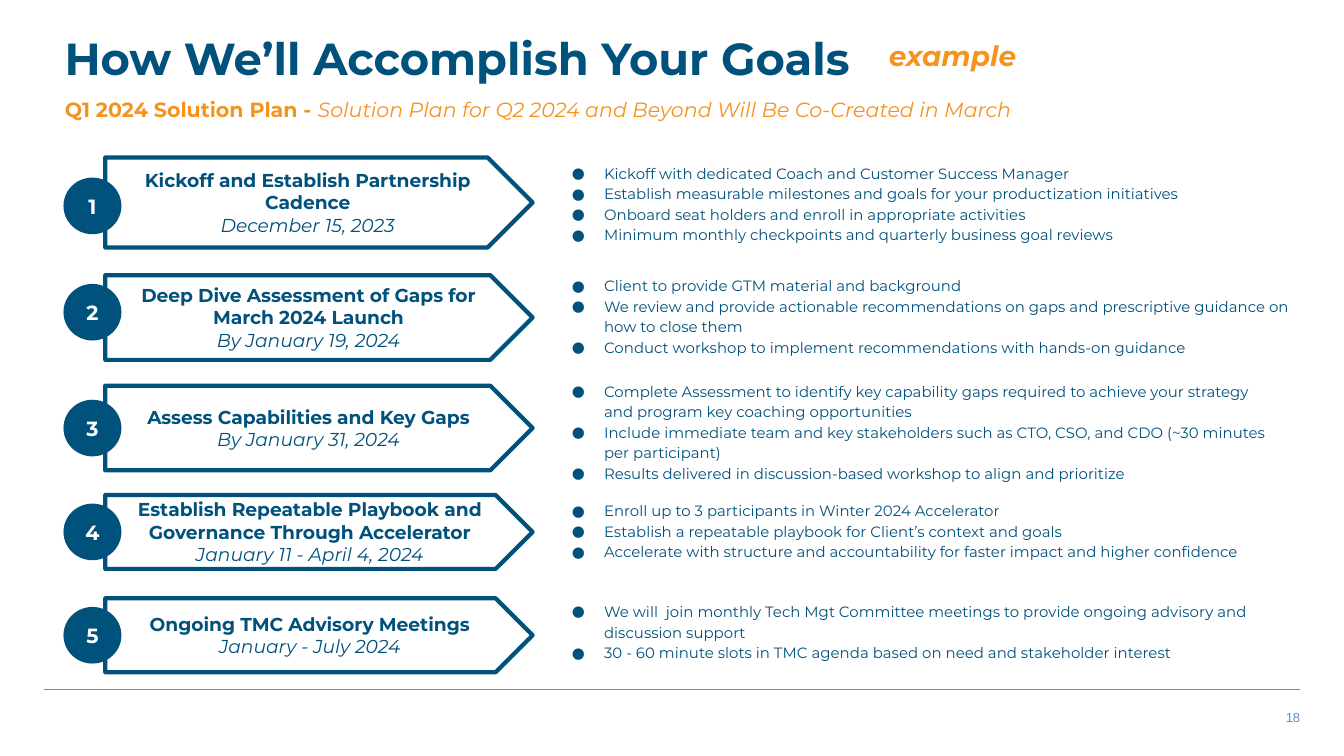
"""Build the quarterly solution plan slide with five numbered steps."""
from dataclasses import dataclass

from lxml import etree
from pptx import Presentation
from pptx import util as u
from pptx.dml.color import RGBColor
from pptx.enum import shapes, text
from pptx.oxml.ns import qn

COLORS = {"navy": "00517C", "title": "00527C", "orange": "F6921E", "rule": "668EB9", "white": "FFFFFF"}
FONT = "Montserrat"
COLUMNS = 100
SLIDE_WIDTH = u.Inches(10)
SLIDE_HEIGHT = SLIDE_WIDTH * 9 // 16
CELL = SLIDE_WIDTH / COLUMNS
ARROW_LEFT, ARROW_WIDTH = 7.83, 31.8
BADGE_LEFT, BADGE_WIDTH, BADGE_HEIGHT = 4.88, 4, 3.9
BULLETS_LEFT = 40.45


@dataclass(frozen=True)
class Area:
    """A place on the slide in grid columns and rows."""
    left: float
    top: float
    width: float
    height: float

    def lengths(self) -> tuple[int, ...]:
        """Return the place in slide units."""
        return tuple(cells(n) for n in (self.left, self.top, self.width, self.height))


@dataclass(frozen=True)
class Style:
    """The look of one run of text."""
    size: float
    color: str
    bold: bool = False
    italic: bool = False
    font: str = FONT


@dataclass(frozen=True)
class Step:
    """One step of the plan: arrow, badge and bullet list."""
    heading: str
    date: str
    bullets: tuple[str, ...]
    top: float
    height: float
    bullets_top: float
    bullets_width: float
    bullets_height: float
    badge_shift: float = 0


STEPS = (
    Step("Kickoff and Establish Partnership Cadence", "December 15, 2023",
         ("Kickoff with dedicated Coach and Customer Success Manager",
          "Establish measurable milestones and goals for your productization initiatives",
          "Onboard seat holders and enroll in appropriate activities",
          "Minimum monthly checkpoints and quarterly business goal reviews"),
         11.72, 6.7, 11.32, 57.5, 8.7, 0.25),
    Step("Deep Dive Assessment of Gaps for March 2024 Launch", "By January 19, 2024",
         ("Client to provide GTM material and background",
          "We review and provide actionable recommendations on gaps and prescriptive guidance on how to close them",
          "Conduct workshop to implement recommendations with hands-on guidance"),
         20.48, 6.3, 19.7, 57, 8.7, -0.4),
    Step("Assess Capabilities and Key Gaps", "By January 31, 2024",
         ("Complete Assessment to identify key capability gaps required to achieve your strategy "
          "and program key coaching opportunities",
          "Include immediate team and key stakeholders such as CTO, CSO, and CDO (~30 minutes per participant)",
          "Results delivered in discussion-based workshop to align and prioritize"),
         28.7, 6.3, 27.54, 55.6, 8.7),
    Step("Establish Repeatable Playbook and Governance Through Accelerator", "January 11 - April 4, 2024",
         ("Enroll up to 3 participants in Winter 2024 Accelerator",
          "Establish a repeatable playbook for Client’s context and goals",
          "Accelerate with structure and accountability for faster impact and higher confidence"),
         36.83, 5.5, 36.44, 57, 6.3),
    Step("Ongoing TMC Advisory Meetings", "January - July 2024",
         ("We will  join monthly Tech Mgt Committee meetings to provide ongoing advisory and discussion support",
          "30 - 60 minute slots in TMC agenda based on need and stakeholder interest"),
         44.52, 5.5, 43.94, 57, 5.5),
)


def cells(count: float) -> int:
    """Turn a count of grid cells into slide units."""
    return round(count * CELL)


def rgb(name: str) -> RGBColor:
    """Look up a colour by name."""
    return RGBColor.from_string(COLORS[name])


def format_span(span, style: Style) -> None:
    """Apply a style to one run."""
    font = span.font
    font.name, font.size = style.font, u.Pt(style.size)
    font.bold, font.italic = style.bold, style.italic
    font.color.rgb = rgb(style.color)


def write(frame, lines: list[tuple[str, Style]], align=text.PP_ALIGN.LEFT) -> None:
    """Write one styled paragraph for each line."""
    frame.text = "\n".join(line for line, _ in lines)
    for para, (_, style) in zip(frame.paragraphs, lines):
        para.alignment = align
        format_span(para.runs[0], style)


def set_frame(frame, side: float, edge: float, anchor=text.MSO_ANCHOR.TOP) -> None:
    """Set wrapping, anchor and insets in inches."""
    frame.word_wrap = True
    frame.auto_size = text.MSO_AUTO_SIZE.NONE
    frame.vertical_anchor = anchor
    frame.margin_left = frame.margin_right = u.Inches(side)
    frame.margin_top = frame.margin_bottom = u.Inches(edge)


def add_text(page, area: Area, side: float, edge: float):
    """Add an empty text box and return its frame."""
    frame = page.shapes.add_textbox(*area.lengths()).text_frame
    set_frame(frame, side, edge)
    return frame


def add_outlined(page, kind, area: Area, fill: str, lines: list[tuple[str, Style]]) -> None:
    """Add a navy outlined shape with centred text."""
    shape = page.shapes.add_shape(kind, *area.lengths())
    shape.shadow.inherit = False
    shape.fill.solid()
    shape.fill.fore_color.rgb = rgb(fill)
    shape.line.color.rgb = rgb("navy")
    shape.line.width = u.Pt(2.25)
    set_frame(shape.text_frame, 0.07, 0.07, text.MSO_ANCHOR.MIDDLE)
    write(shape.text_frame, lines, text.PP_ALIGN.CENTER)


def add_bullets(page, area: Area, bullets: tuple[str, ...]) -> None:
    """Add a bulleted list."""
    frame = add_text(page, area, 0.07, 0.07)
    write(frame, [(bullet, Style(8, "navy")) for bullet in bullets])
    for para in frame.paragraphs:
        para.line_spacing = 1.15
        props = para._p.get_or_add_pPr()
        props.set("marL", str(u.Inches(0.38)))
        props.set("indent", str(u.Inches(-0.24)))
        color = etree.SubElement(props, qn("a:buClr"))
        etree.SubElement(color, qn("a:srgbClr"), val=COLORS["navy"])
        etree.SubElement(props, qn("a:buFont"), typeface=FONT)
        etree.SubElement(props, qn("a:buChar"), char="●")


def add_step(page, number: int, step: Step) -> None:
    """Draw one step with its arrow, badge and bullets."""
    add_outlined(page, shapes.MSO_SHAPE.PENTAGON, Area(ARROW_LEFT, step.top, ARROW_WIDTH, step.height), "white",
                 [(step.heading, Style(10, "navy", bold=True)), (step.date, Style(10, "navy", italic=True))])
    badge_top = step.top + (step.height - BADGE_HEIGHT) / 2 + step.badge_shift
    add_outlined(page, shapes.MSO_SHAPE.OVAL, Area(BADGE_LEFT, badge_top, BADGE_WIDTH, BADGE_HEIGHT), "navy",
                 [(str(number), Style(11, "white", bold=True))])
    add_bullets(page, Area(BULLETS_LEFT, step.bullets_top, step.bullets_width, step.bullets_height), step.bullets)


def add_heading(page) -> None:
    """Write the title, its tag and the subtitle."""
    title = page.shapes.title
    title.left, title.top, title.width, title.height = Area(4.1, 1.9, 65.9, 4.8).lengths()
    set_frame(title.text_frame, 0.07, 0.04)
    write(title.text_frame, [("How We’ll Accomplish Your Goals", Style(24, "title", bold=True))])
    tag = add_text(page, Area(65.15, 1.9, 24.8, 5.5), 0.1, 0.1)
    write(tag, [("example", Style(15, "orange", bold=True, italic=True))])
    para = add_text(page, Area(4.13, 7, 73.4, 3.3), 0.07, 0.04).paragraphs[0]
    para.line_spacing, para.space_before = 0.9, u.Pt(8)
    for words, style in (("Q1 2024 Solution Plan - ", Style(11, "orange", bold=True)),
                         ("Solution Plan for Q2 2024 and Beyond Will Be Co-Created in March",
                          Style(11, "orange", italic=True))):
        span = para.add_run()
        span.text = words
        format_span(span, style)


def add_footer(page) -> None:
    """Draw the rule and the page number."""
    rule = page.shapes.add_connector(shapes.MSO_CONNECTOR.STRAIGHT, cells(3.3), cells(51.3), cells(96.7), cells(51.3))
    rule.line.color.rgb = rgb("rule")
    rule.line.width = u.Pt(1)
    etree.SubElement(rule._element.spPr, qn("a:effectLst"))
    number = add_text(page, Area(57.45, 52.4, 40, 1.9), 0.07, 0.04)
    write(number, [("18", Style(7, "rule", font="Arial"))], text.PP_ALIGN.RIGHT)


def main() -> None:
    """Build and save the deck."""
    deck = Presentation()
    deck.slide_width, deck.slide_height = SLIDE_WIDTH, SLIDE_HEIGHT
    page = deck.slides.add_slide(deck.slide_layouts[5])
    add_footer(page)
    add_heading(page)
    for number, step in enumerate(STEPS, 1):
        add_step(page, number, step)
    deck.save("out.pptx")


if __name__ == "__main__":
    main()
